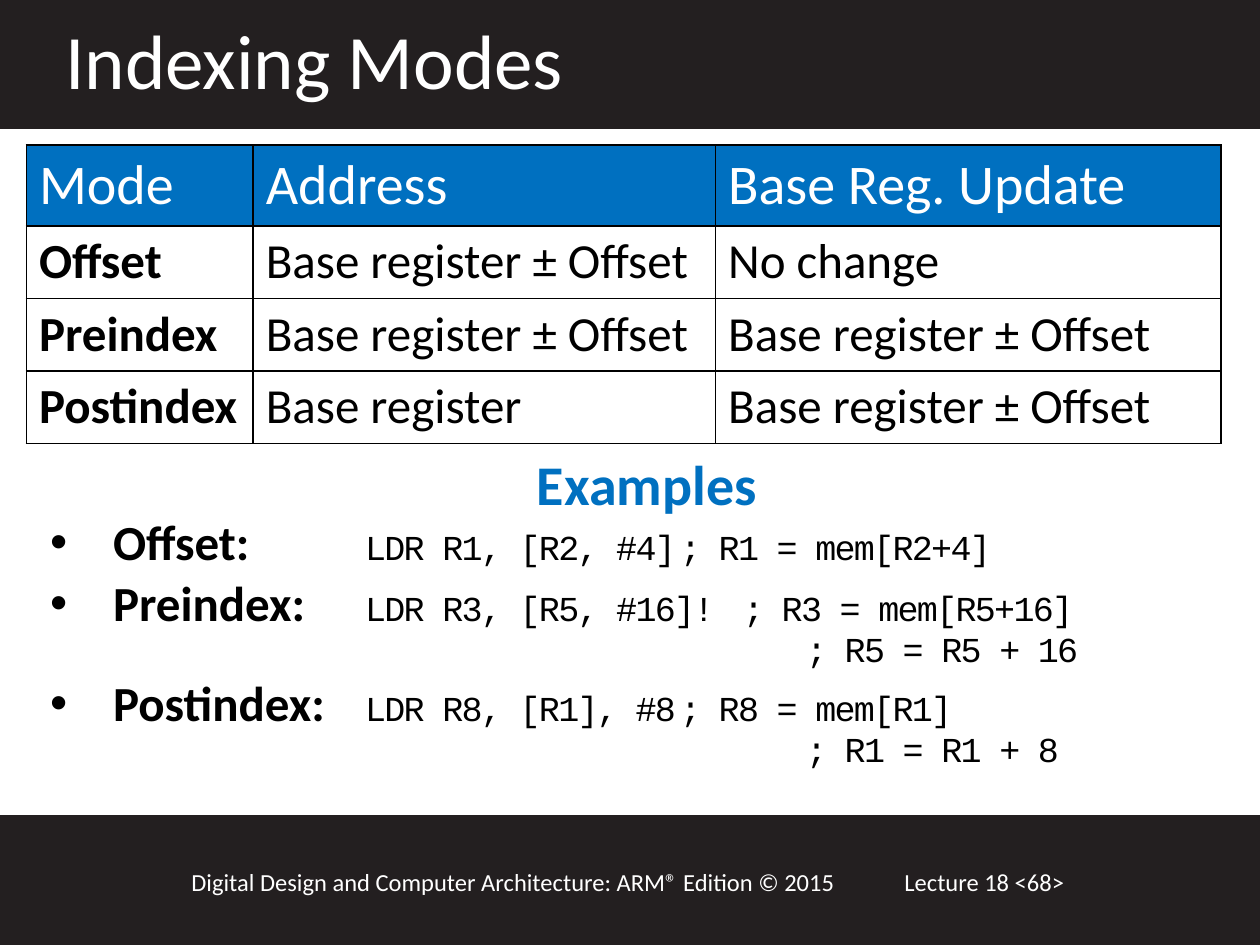
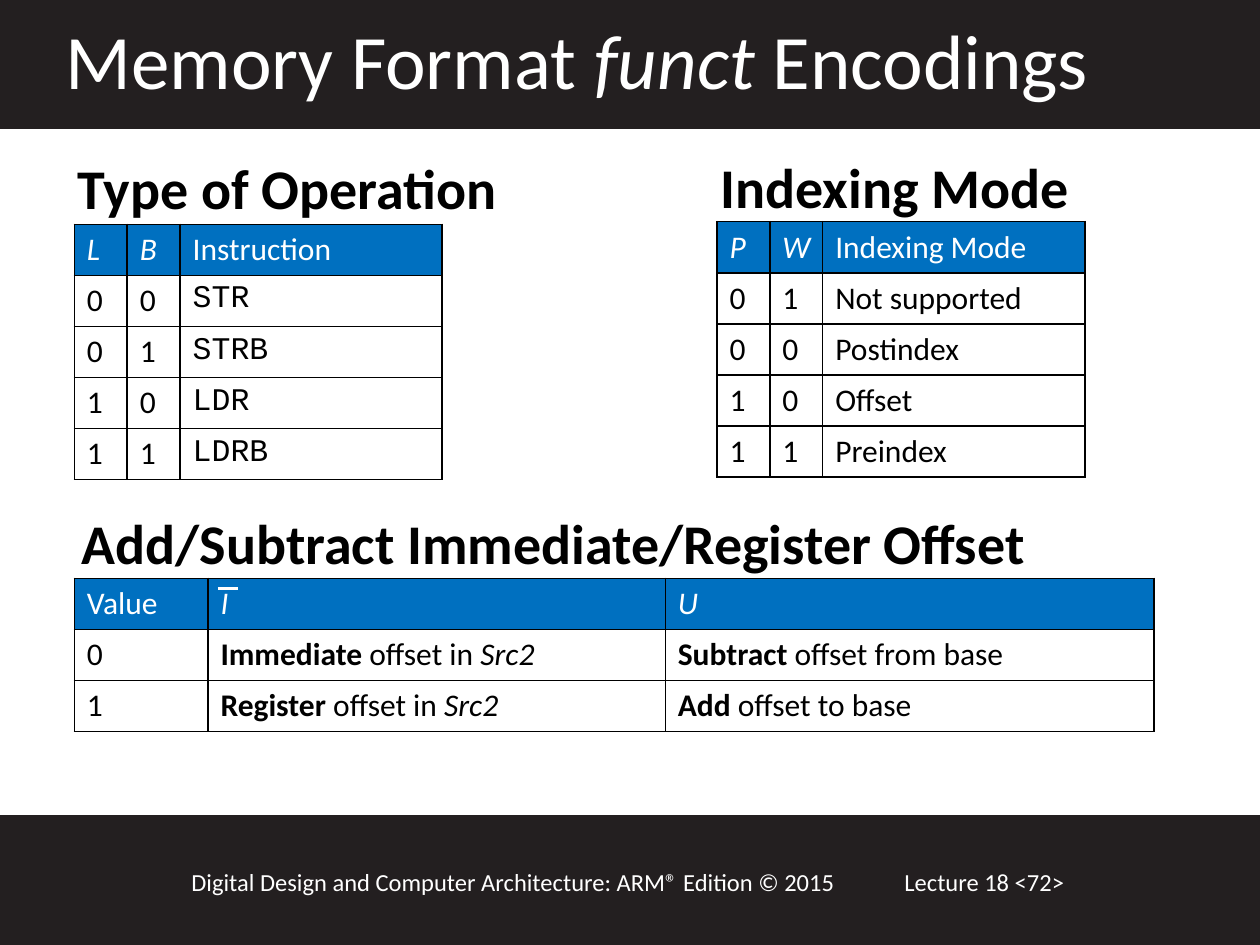
from dataclasses import dataclass
from typing import NamedTuple, Optional

from lxml.etree import SubElement
from pptx import Presentation
from pptx.dml.color import RGBColor
from pptx.enum.shapes import MSO_CONNECTOR, MSO_SHAPE
from pptx.enum.text import MSO_ANCHOR, MSO_AUTO_SIZE, PP_ALIGN
from pptx.oxml.ns import qn
from pptx.util import Emu, Pt

PX = 4572
WIDTH, HEIGHT = 2000, 1500
TITLE_ONLY = 5

BAND = RGBColor(0x23, 0x1F, 0x20)
BLUE = RGBColor(0x00, 0x70, 0xC0)
WHITE = RGBColor(0xFF, 0xFF, 0xFF)
BLACK = RGBColor(0x00, 0x00, 0x00)

SANS = "Calibri"
MONO = "Courier New"
FOOTER = "Digital Design and Computer Architecture: ARM® Edition © 2015"
BASE_OFFSET = "Base register ± Offset"


class Box(NamedTuple):
    left: int
    top: int
    width: int
    height: int

    def emu(self) -> tuple:
        return tuple(Emu(length * PX) for length in self)


class Run(NamedTuple):
    text: str
    bold: bool = False
    italic: bool = False
    font: str = SANS


@dataclass(frozen=True)
class Grid:
    left: int
    top: int
    columns: tuple
    header_height: int
    row_height: int
    header_size: int
    body_size: int
    rows: list


@dataclass(frozen=True)
class Heading:
    text: str
    box: Box


@dataclass(frozen=True)
class Example:
    label: str
    tabs: str
    code: str
    effects: tuple


BANDS = [Box(0, 1296, WIDTH, 204), Box(0, 0, WIDTH, 202)]
TITLE_BOX = Box(84, 10, 1898, 168)
FOOTER_BOX = Box(284, 1366, 1150, 68)
LECTURE_BOX = Box(1416, 1366, 434, 68)
EXAMPLES_BOX = Box(60, 716, 1934, 366)
HANGING = 100
COMMENT_INDENT = 1200

MODES = Grid(42, 230, (360, 734, 802), 128, 114, 32, 28, [
    ["Mode", "Address", "Base Reg. Update"],
    [Run("Offset", bold=True), BASE_OFFSET, "No change"],
    [Run("Preindex", bold=True), BASE_OFFSET, BASE_OFFSET],
    [Run("Postindex", bold=True), "Base register", BASE_OFFSET],
])

EXAMPLES = [
    Example("Offset:", "\t\t", "LDR R1, [R2, #4]", ("R1 = mem[R2+4]",)),
    Example("Preindex:", "\t", "LDR R3, [R5, #16]!",
            ("R3 = mem[R5+16]", "R5 = R5 + 16")),
    Example("Postindex:", "\t", "LDR R8, [R1], #8",
            ("R8 = mem[R1]", "R1 = R1 + 8")),
]


def encoding_grid(left: int, top: int, columns: tuple, rows: list) -> Grid:
    return Grid(left, top, columns, 81, 81, 18, 18, rows)


def italic(text: str) -> Run:
    return Run(text, italic=True)


def code(text: str) -> Run:
    return Run(text, font=MONO)


BIT_COLUMNS = (84, 84, 416)
ENCODINGS = [
    encoding_grid(1138, 352, BIT_COLUMNS, [
        [italic("P"), italic("W"), "Indexing Mode"],
        ["0", "1", "Not supported"],
        ["0", "0", "Postindex"],
        ["1", "0", "Offset"],
        ["1", "1", "Preindex"],
    ]),
    encoding_grid(118, 356, BIT_COLUMNS, [
        [italic("L"), italic("B"), "Instruction"],
        ["0", "0", code("STR")],
        ["0", "1", code("STRB")],
        ["1", "0", code("LDR")],
        ["1", "1", code("LDRB")],
    ]),
    encoding_grid(118, 918, (212, 726, 776), [
        ["Value", italic("I"), italic("U")],
        ["0",
         [Run("Immediate", bold=True), Run(" offset in "), italic("Src2")],
         [Run("Subtract", bold=True), Run(" offset from base")]],
        ["1",
         [Run("Register", bold=True), Run(" offset in "), italic("Src2")],
         [Run("Add", bold=True), Run(" offset to base")]],
    ]),
]

HEADINGS = [
    Heading("Type of Operation", Box(104, 246, 712, 118)),
    Heading("Indexing Mode", Box(1124, 244, 598, 118)),
    Heading("Add/Subtract Immediate/Register Offset", Box(110, 810, 1554, 118)),
]


def add_text(paragraph, text: str, *, size: int, color: RGBColor = BLACK,
             bold: bool = False, italic: bool = False, font: str = SANS,
             spacing: Optional[int] = None) -> None:
    run = paragraph.add_run()
    run.text = text
    run.font.name = font
    run.font.size = Pt(size)
    run.font.bold = bold
    run.font.italic = italic
    run.font.color.rgb = color
    if spacing is not None:
        run._r.get_or_add_rPr().set("spc", str(spacing * 100))


def add_content(paragraph, content, size: int, color: RGBColor) -> None:
    if isinstance(content, str):
        content = Run(content)
    runs = [content] if isinstance(content, Run) else content
    for run in runs:
        add_text(paragraph, run.text, size=size, color=color,
                 bold=run.bold, italic=run.italic, font=run.font)


def add_text_frame(slide, box: Box, wrap: bool = True):
    frame = slide.shapes.add_textbox(*box.emu()).text_frame
    frame.word_wrap = wrap
    return frame


def add_band(slide, box: Box) -> None:
    band = slide.shapes.add_shape(MSO_SHAPE.RECTANGLE, *box.emu())
    band.shadow.inherit = False
    band.fill.solid()
    band.fill.fore_color.rgb = BAND
    band.line.color.rgb = BAND
    band.line.width = Pt(2)


def add_titled_slide(presentation, title_content, number: int):
    slide = presentation.slides.add_slide(presentation.slide_layouts[TITLE_ONLY])
    for box in BANDS:
        add_band(slide, box)
    for text, box in ((f"Lecture 18 <{number}>", LECTURE_BOX), (FOOTER, FOOTER_BOX)):
        frame = add_text_frame(slide, box)
        add_text(frame.paragraphs[0], text, size=14, color=WHITE)
    title = slide.shapes.title
    slide.shapes.element.append(title.element)
    title.left, title.top, title.width, title.height = TITLE_BOX.emu()
    frame = title.text_frame
    frame.word_wrap = True
    frame.auto_size = MSO_AUTO_SIZE.NONE
    frame.vertical_anchor = MSO_ANCHOR.TOP
    frame.paragraphs[0].alignment = PP_ALIGN.LEFT
    add_content(frame.paragraphs[0], title_content, 44, WHITE)
    return slide


def add_borders(cell) -> None:
    properties = cell._tc.get_or_add_tcPr()
    for side in ("a:lnL", "a:lnR", "a:lnT", "a:lnB"):
        line = SubElement(properties, qn(side), w=str(Pt(1)))
        fill = SubElement(line, qn("a:solidFill"))
        SubElement(fill, qn("a:srgbClr"), val=str(BLACK))


def add_grid(slide, grid: Grid) -> None:
    heights = [grid.header_height] + [grid.row_height] * (len(grid.rows) - 1)
    box = Box(grid.left, grid.top, sum(grid.columns), sum(heights))
    table = slide.shapes.add_table(
        len(heights), len(grid.columns), *box.emu()).table
    table.horz_banding = False
    for column, width in zip(table.columns, grid.columns):
        column.width = Emu(width * PX)
    for index, (row, height, contents) in enumerate(
            zip(table.rows, heights, grid.rows)):
        row.height = Emu(height * PX)
        header = index == 0
        for cell, content in zip(row.cells, contents):
            add_borders(cell)
            cell.fill.solid()
            cell.fill.fore_color.rgb = BLUE if header else WHITE
            add_content(cell.text_frame.paragraphs[0], content,
                        grid.header_size if header else grid.body_size,
                        WHITE if header else BLACK)


def add_indented_paragraph(frame, margin: int, bullet: bool = False):
    paragraph = frame.add_paragraph()
    properties = paragraph._p.get_or_add_pPr()
    properties.set("marL", str(margin * PX))
    properties.set("indent", str(-margin * PX if bullet else 0))
    if bullet:
        SubElement(properties, qn("a:buFont"), typeface="Arial")
        SubElement(properties, qn("a:buChar"), char="•")
    paragraph.line_spacing = 0.9
    return paragraph


def add_examples(slide) -> None:
    frame = add_text_frame(slide, EXAMPLES_BOX)
    heading = frame.paragraphs[0]
    heading.alignment = PP_ALIGN.CENTER
    heading.line_spacing = 0.9
    add_text(heading, "Examples", size=32, color=BLUE, bold=True)
    for index, example in enumerate(EXAMPLES):
        paragraph = add_indented_paragraph(frame, HANGING, bullet=True)
        paragraph.space_before = Pt(5 if index else 0)
        add_text(paragraph, example.label, size=28, bold=True)
        add_text(paragraph, example.tabs, size=20)
        first, *others = example.effects
        add_text(paragraph, f"{example.code}\t; {first}",
                 size=20, font=MONO, spacing=-1)
        for effect in others:
            paragraph = add_indented_paragraph(frame, COMMENT_INDENT)
            add_text(paragraph, f"; {effect}", size=20, font=MONO, spacing=-1)


def add_heading(slide, heading: Heading) -> None:
    paragraph = add_text_frame(slide, heading.box, wrap=False).paragraphs[0]
    paragraph.line_spacing = 0.9
    add_text(paragraph, heading.text, size=32, bold=True)


def add_overbar(slide, left: int, right: int, top: int) -> None:
    overbar = slide.shapes.add_connector(
        MSO_CONNECTOR.STRAIGHT, *Box(left, top, right, top).emu())
    overbar.line.color.rgb = WHITE
    overbar.line.width = Pt(2)
    SubElement(overbar.element.spPr, qn("a:effectLst"))


def main() -> None:
    presentation = Presentation()
    presentation.slide_width = Emu(WIDTH * PX)
    presentation.slide_height = Emu(HEIGHT * PX)

    modes_slide = add_titled_slide(presentation, "Indexing Modes", 68)
    add_grid(modes_slide, MODES)
    add_examples(modes_slide)

    encodings_slide = add_titled_slide(
        presentation,
        [Run("Memory Format "), italic("funct"), Run(" Encodings")], 72)
    for grid in ENCODINGS:
        add_grid(encodings_slide, grid)
    for heading in HEADINGS:
        add_heading(encodings_slide, heading)
    add_overbar(encodings_slide, 346, 378, 934)

    presentation.save("out.pptx")


if __name__ == "__main__":
    main()
